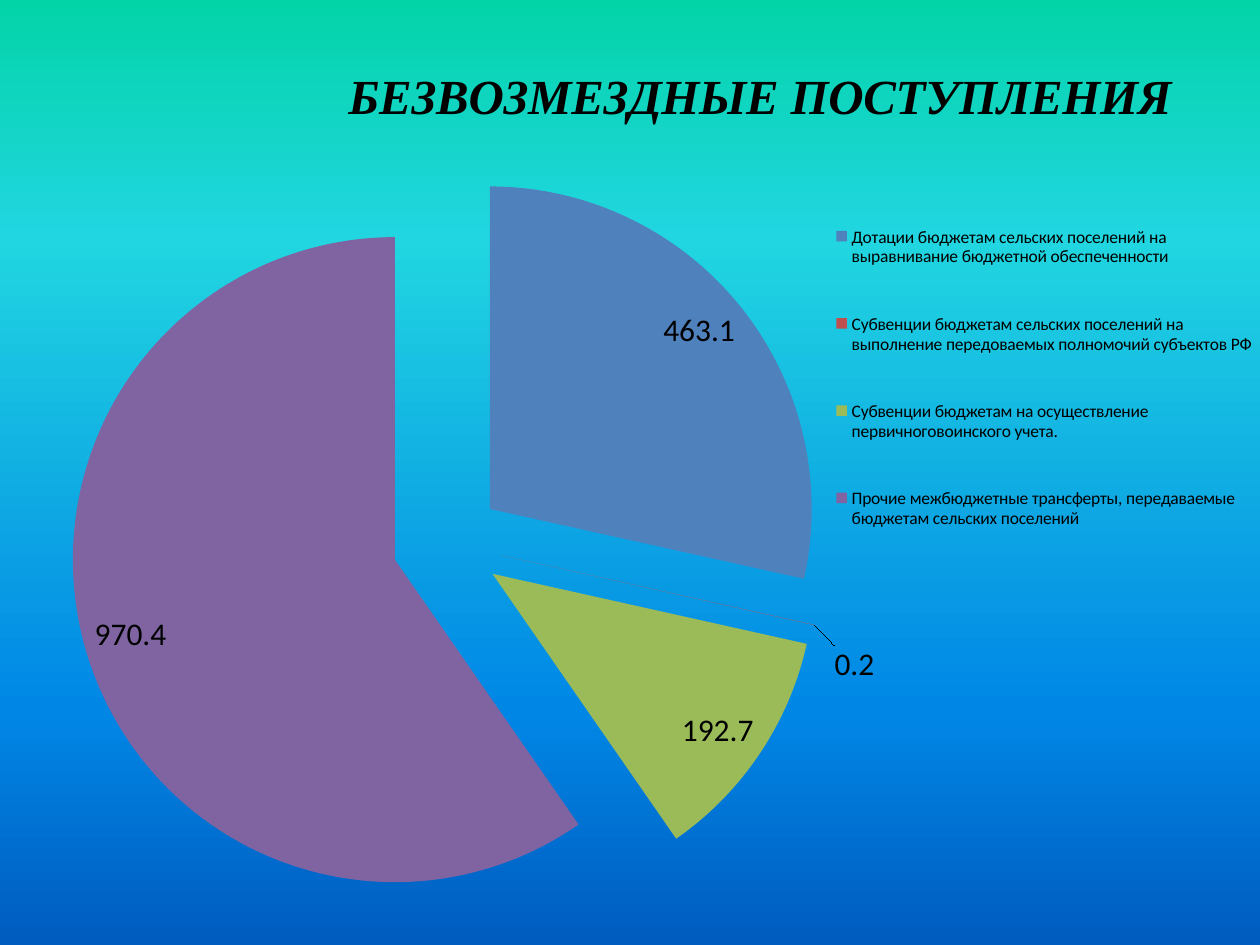
from lxml import etree
from pptx import Presentation
from pptx.chart.data import CategoryChartData
from pptx.dml.color import RGBColor
from pptx.enum import chart as charts
from pptx.oxml import ns
from pptx.util import Inches, Pt

# Content
TITLE = "БЕЗВОЗМЕЗДНЫЕ ПОСТУПЛЕНИЯ"
BLACK = RGBColor(0x00, 0x00, 0x00)
SLICES = [
    ("Дотации бюджетам сельских поселений на выравнивание бюджетной обеспеченности",
     463.1, RGBColor(0x4F, 0x81, 0xBD)),
    ("Субвенции бюджетам сельских поселений на выполнение передоваемых полномочий субъектов РФ",
     0.2, RGBColor(0xC0, 0x50, 0x4D)),
    ("Субвенции бюджетам на осуществление первичноговоинского учета.",
     192.7, RGBColor(0x9B, 0xBB, 0x59)),
    ("Прочие межбюджетные трансферты, передаваемые бюджетам сельских поселений",
     970.4, RGBColor(0x80, 0x64, 0xA2)),
]
SMALL_SLICE = 1
EXPLOSION = 17
BACKGROUND = [(0, "03D4A8"), (25, "21D6E0"), (75, "0087E6"), (100, "005CBF")]


def add_layout(parent, position, **values):
    """Place a chart part by fractions of the chart area."""
    for old in parent.findall(ns.qn("c:layout")):
        parent.remove(old)
    layout = etree.Element(ns.qn("c:layout"))
    manual = etree.SubElement(layout, ns.qn("c:manualLayout"))
    for name, value in values.items():
        etree.SubElement(manual, ns.qn(f"c:{name}")).set("val", str(value))
    parent.insert(position, layout)


deck = Presentation()
deck.slide_width, deck.slide_height = Inches(10), Inches(7.5)
page = deck.slides.add_slide(deck.slide_layouts[6])

# Background gradient, top to bottom
fill = page.background.fill
fill.gradient()
fill.gradient_angle = 270
stops = page.element.find(".//" + ns.qn("a:gsLst"))
for stop in list(stops):
    stops.remove(stop)
for percent, colour in BACKGROUND:
    stop = etree.SubElement(stops, ns.qn("a:gs"), pos=str(percent * 1000))
    etree.SubElement(stop, ns.qn("a:srgbClr"), val=colour)

# Pie chart
data = CategoryChartData()
data.categories = [name for name, _, _ in SLICES]
data.add_series(TITLE, [value for _, value, _ in SLICES])
chart = page.shapes.add_chart(charts.XL_CHART_TYPE.PIE, 0, 0,
                              deck.slide_width, deck.slide_height, data).chart
chart.font.name = "Calibri"
chart.font.size = Pt(18)
chart.font.color.rgb = BLACK
plot = chart.plots[0]
plot.vary_by_categories = True
add_layout(chart.element.find(".//" + ns.qn("c:plotArea")), 0,
           layoutTarget="inner", xMode="edge", yMode="edge",
           x=0.056, y=0.154, w=0.599, h=0.842)

# Title
chart.has_title = True
para = chart.chart_title.text_frame.paragraphs[0]
para.text = TITLE
font = para.font
font.name, font.size = "Times New Roman", Pt(28)
font.bold = font.italic = True
font.color.rgb = BLACK
chart.chart_title.include_in_layout = False
add_layout(chart.element.find(".//" + ns.qn("c:title")), 1,
           xMode="edge", yMode="edge", x=0.27, y=0.06)

# Legend
chart.has_legend = True
legend = chart.legend
legend.position = charts.XL_LEGEND_POSITION.RIGHT
legend.include_in_layout = False
legend.font.size = Pt(10)
add_layout(chart.element.find(".//" + ns.qn("c:legend")), 1,
           xMode="edge", yMode="edge", x=0.66, y=0.19, w=0.34, h=0.42)

# Slices and value labels
series = plot.series[0]
for index, (_, _, colour) in enumerate(SLICES):
    slice_fill = series.points[index].format.fill
    slice_fill.solid()
    slice_fill.fore_color.rgb = colour
explosion = etree.Element(ns.qn("c:explosion"), val=str(EXPLOSION))
series._element.find(ns.qn("c:dPt")).addprevious(explosion)

labels = series.data_labels
labels.show_value = True
labels.position = charts.XL_LABEL_POSITION.INSIDE_END
series.points[SMALL_SLICE].data_label.position = charts.XL_LABEL_POSITION.OUTSIDE_END
add_layout(series._element.find(".//" + ns.qn("c:dLbl")), 1, x=0.01, y=0.02)

deck.save("out.pptx")
